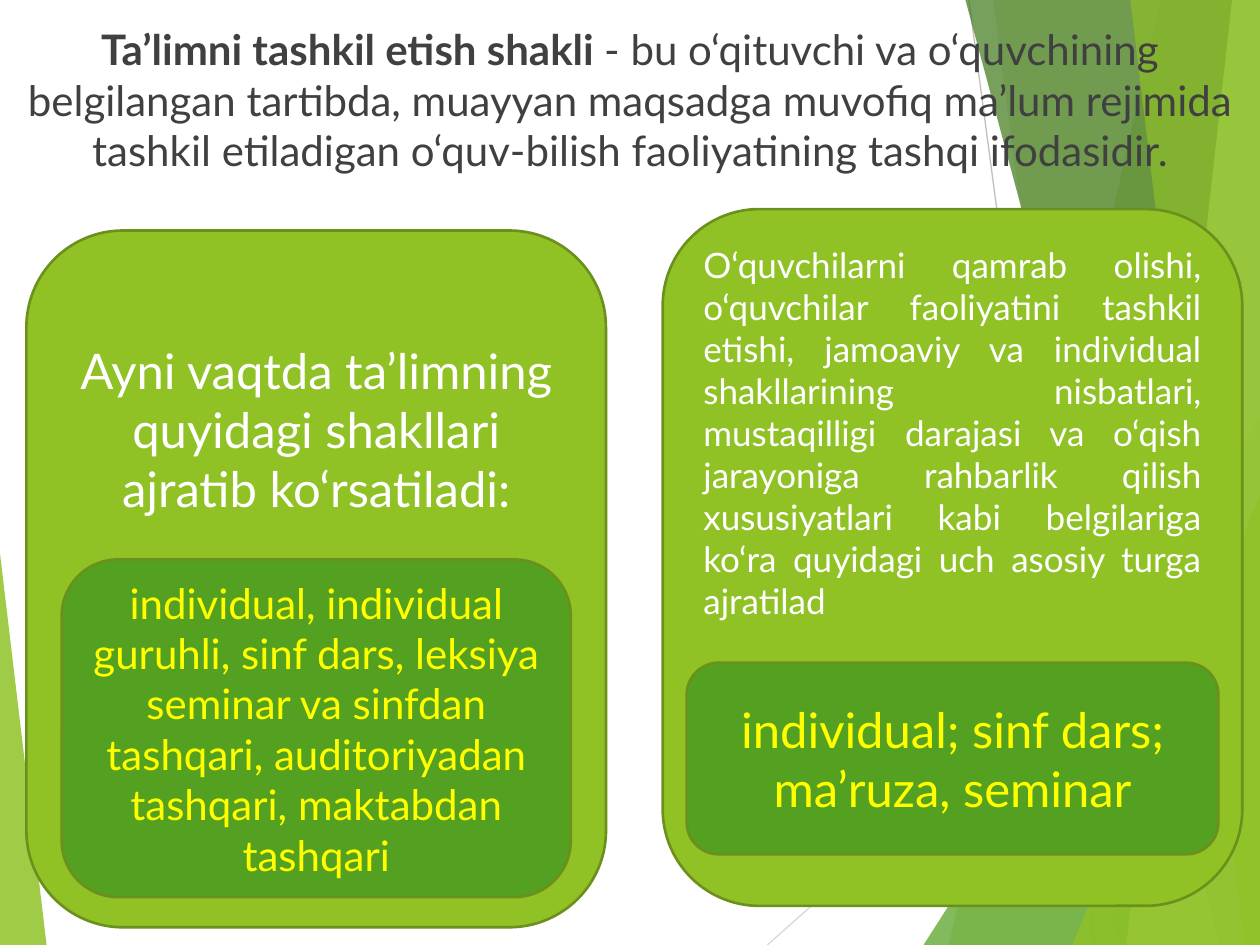
from dataclasses import dataclass

from lxml.etree import SubElement
from pptx import Presentation
from pptx.dml.color import RGBColor
from pptx.enum.shapes import MSO_CONNECTOR as Connector, MSO_SHAPE as Shape
from pptx.enum.text import MSO_ANCHOR as Anchor, PP_ALIGN as Align
from pptx.oxml.ns import qn
from pptx.util import Inches, Pt


@dataclass(frozen=True)
class Theme:
    font: str = "Lato"
    lime: str = "90C226"
    green: str = "54A021"
    forest: str = "3F7819"
    pale: str = "C0E474"
    border: str = "6B901C"
    ink: str = "404040"
    white: str = "FFFFFF"
    yellow: str = "FFFF00"
    ray: str = "BFBFBF"
    light_ray: str = "D9D9D9"
    small: int = 20
    medium: int = 24
    large: int = 28


class SlideBuilder:
    def __init__(self, slide, theme):
        self.shapes = slide.shapes
        self.theme = theme

    def ray(self, start, end, color):
        ends = [Inches(value) for value in (*start, *end)]
        line = self.shapes.add_connector(Connector.STRAIGHT, *ends)
        line.line.color.rgb = RGBColor.from_string(color)
        line.line.width = Pt(0.75)
        SubElement(line._element.spPr, qn("a:effectLst"))

    def tint(self, shape, color, opacity):
        shape.shadow.inherit = False
        shape.fill.solid()
        shape.fill.fore_color.rgb = RGBColor.from_string(color)
        shape.line.fill.background()
        color_node = shape._element.spPr.find(qn("a:solidFill"))[0]
        SubElement(color_node, qn("a:alpha"), val=str(opacity * 1000))

    def facet(self, top_x, bottom_x, color, opacity):
        """Band from a slanted left edge to the right side of the slide."""
        top, right, bottom = Inches(-0.01), Inches(10), Inches(7.5)
        outline = self.shapes.build_freeform(Inches(top_x), top, scale=1.0)
        outline.add_line_segments(
            [(right, top), (right, bottom), (Inches(bottom_x), bottom)], close=True)
        self.tint(outline.convert_to_shape(), color, opacity)

    def triangle(self, box, apex, color, opacity):
        triangle = self.shapes.add_shape(
            Shape.ISOSCELES_TRIANGLE, *[Inches(value) for value in box])
        triangle.adjustments[0] = apex
        self.tint(triangle, color, opacity)

    def add_text(self, frame, runs, size, color, align):
        frame.word_wrap = True
        paragraph = frame.paragraphs[0]
        paragraph.alignment = align
        for text, bold in runs:
            run = paragraph.add_run()
            run.text = text
            run.font.name = self.theme.font
            run.font.size = Pt(size)
            run.font.bold = bold
            run.font.color.rgb = RGBColor.from_string(color)

    def heading(self, box, runs):
        heading = self.shapes.add_textbox(*[Inches(value) for value in box])
        self.add_text(heading.text_frame, runs, self.theme.medium,
                      self.theme.ink, Align.CENTER)

    def card(self, box, text, size, fill, color, align=Align.CENTER,
             anchor=Anchor.MIDDLE, top_margin=0.05):
        card = self.shapes.add_shape(
            Shape.ROUNDED_RECTANGLE, *[Inches(value) for value in box])
        card.shadow.inherit = False
        card.fill.solid()
        card.fill.fore_color.rgb = RGBColor.from_string(fill)
        card.line.color.rgb = RGBColor.from_string(self.theme.border)
        card.line.width = Pt(1.5)
        frame = card.text_frame
        frame.vertical_anchor = anchor
        frame.margin_top = Inches(top_margin)
        self.add_text(frame, [(text, False)], size, color, align)


def main():
    theme = Theme()
    deck = Presentation()
    deck.slide_width, deck.slide_height = Inches(10), Inches(7.5)
    page = SlideBuilder(deck.slides.add_slide(deck.slide_layouts[6]), theme)

    # Faceted backdrop
    page.ray((7.69, 0), (8.69, 7.5), theme.ray)
    page.ray((10, 4.03), (6.09, 7.5), theme.light_ray)
    page.facet(9.21, 7.53, theme.lime, 30)
    page.facet(7.88, 8.87, theme.lime, 20)
    page.triangle((7.33, 3.33, 2.67, 4.17), 1, theme.green, 72)
    page.facet(7.66, 9.68, theme.forest, 70)
    page.facet(9.78, 8.94, theme.pale, 70)
    page.facet(8.97, 9.88, theme.lime, 65)
    page.triangle((8.51, 3.93, 1.49, 3.57), 1, theme.lime, 80)
    page.triangle((0, 4.39, 0.37, 3.11), 0, theme.lime, 85)

    # Definition
    page.heading((0.12, 0.14, 9.76, 7.19), [
        ("Ta’limni tashkil etish shakli ", True),
        ("- bu o‘qituvchi va o‘quvchining belgilangan tartibda, muayyan maqsadga "
         "muvofiq ma’lum rejimida tashkil etiladigan o‘quv-bilish faoliyatining "
         "tashqi ifodasidir.", False),
    ])

    # Outer cards
    page.card((0.21, 1.83, 4.6, 5.53),
              "Ayni vaqtda ta’limning quyidagi shakllari ajratib ko‘rsatiladi:",
              theme.large, theme.lime, theme.white,
              anchor=Anchor.TOP, top_margin=0.65)
    page.card((5.26, 1.66, 4.6, 5.53),
              "O‘quvchilarni qamrab olishi, o‘quvchilar faoliyatini tashkil etishi, "
              "jamoaviy va individual shakllarining nisbatlari, mustaqilligi darajasi "
              "va o‘qish jarayoniga rahbarlik qilish xususiyatlari kabi belgilariga "
              "ko‘ra quyidagi uch asosiy turga ajratilad",
              theme.small, theme.lime, theme.white,
              align=Align.JUSTIFY, anchor=Anchor.TOP)

    # Inner cards
    page.card((0.49, 4.44, 4.04, 2.68),
              "individual, individual guruhli, sinf dars, leksiya seminar va sinfdan "
              "tashqari, auditoriyadan tashqari, maktabdan tashqari",
              theme.medium, theme.green, theme.yellow)
    page.card((5.45, 5.26, 4.22, 1.52),
              "individual; sinf dars; ma’ruza, seminar",
              theme.large, theme.green, theme.yellow)

    deck.save("out.pptx")


if __name__ == "__main__":
    main()
